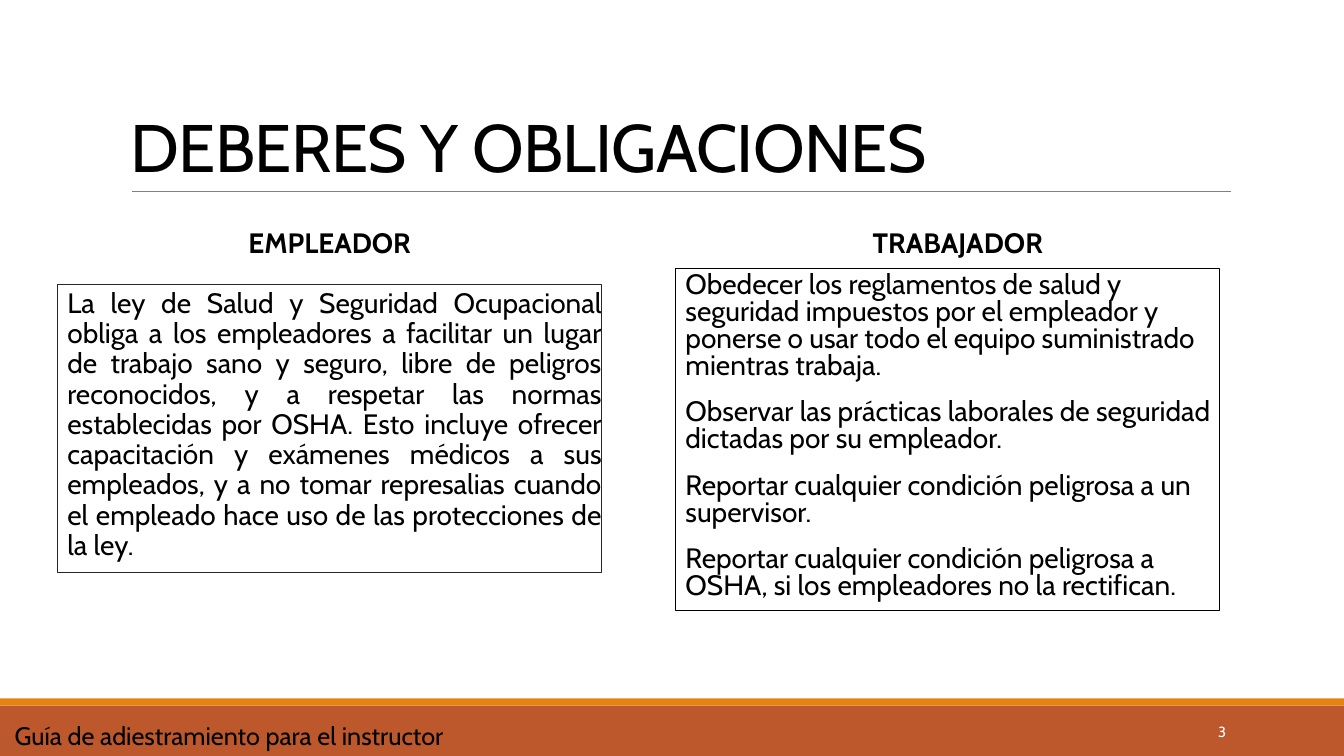
"""Build the slide on the duties of employers and workers."""
from dataclasses import dataclass

import pptx
import pptx.dml.color
import pptx.enum.shapes
import pptx.enum.text
import pptx.oxml.ns
import pptx.slide
import pptx.util
from lxml import etree
from pptx.util import Inches

ALIGN = pptx.enum.text.PP_ALIGN
ANCHOR = pptx.enum.text.MSO_ANCHOR
COLORS = {
    "text": "000000",
    "page_number": "FFFFFF",
    "rule": "808080",
    "employer_border": "262626",
    "worker_border": "000000",
    "footer": "BD582C",
    "accent": "E48312",
}
FONT = "Cabin"
COLUMN_WIDTH = 5.4


@dataclass(frozen=True)
class Band:
    top: float
    height: float
    color: str


@dataclass(frozen=True)
class TextBlock:
    left: float
    top: float
    width: float
    height: float
    paragraphs: tuple[str, ...]
    size: float = 20
    color: str = "text"
    bold: bool = False
    align: ALIGN = ALIGN.LEFT
    anchor: ANCHOR = ANCHOR.TOP
    line_spacing: float = 1.0
    before: float = 0
    after: float = 0
    tracking: float = 0
    border: str = ""
    right_inset: float = 0.1


def heading(left: float, caption: str) -> TextBlock:
    return TextBlock(left, 2.02, COLUMN_WIDTH, 0.81, (caption,), bold=True,
                     align=ALIGN.CENTER, anchor=ANCHOR.MIDDLE,
                     line_spacing=0.9, before=12, after=2)


def panel(left: float, top: float, height: float, duties: tuple[str, ...],
          border: str, align: ALIGN, line_spacing: float) -> TextBlock:
    return TextBlock(left, top, COLUMN_WIDTH, height, duties, align=align,
                     line_spacing=line_spacing, before=12, after=2,
                     border=border, right_inset=0)


BANDS = (Band(7, 0.5, "footer"), Band(6.93, 0.07, "accent"))

EMPLOYER_DUTIES = (
    "La ley de Salud y Seguridad Ocupacional obliga a los empleadores a "
    "facilitar un lugar de trabajo sano y seguro, libre de peligros "
    "reconocidos, y a respetar las normas establecidas por OSHA. Esto incluye "
    "ofrecer capacitación y exámenes médicos a sus empleados, y a no tomar "
    "represalias cuando el empleado hace uso de las protecciones de la ley.",
)
WORKER_DUTIES = (
    "Obedecer los reglamentos de salud y seguridad impuestos por el empleador "
    "y ponerse o usar todo el equipo suministrado mientras trabaja.",
    "Observar las prácticas laborales de seguridad dictadas por su empleador.",
    "Reportar cualquier condición peligrosa a un supervisor.",
    "Reportar cualquier condición peligrosa a OSHA, si los empleadores no la "
    "rectifican.",
)

TEXT_BLOCKS = (
    TextBlock(1.2, 0.31, 11, 1.59, ("DEBERES Y OBLIGACIONES",), size=48,
              anchor=ANCHOR.BOTTOM, line_spacing=0.85, tracking=-0.5),
    heading(0.57, "EMPLEADOR"),
    panel(0.57, 2.82, 2.86, EMPLOYER_DUTIES, "employer_border", ALIGN.JUSTIFY, 0.9),
    heading(6.8, "TRABAJADOR"),
    panel(6.7, 2.66, 3.4, WORKER_DUTIES, "worker_border", ALIGN.LEFT, 0.8),
    TextBlock(-0.15, 7.1, 4.9, 0.4, ("Guía de adiestramiento para el instructor ",),
              size=18, align=ALIGN.CENTER),
    TextBlock(10.83, 7.06, 1.43, 0.4, ("3",), size=10.5, color="page_number",
              align=ALIGN.RIGHT, anchor=ANCHOR.MIDDLE),
)


def rgb(name: str) -> pptx.dml.color.RGBColor:
    return pptx.dml.color.RGBColor.from_string(COLORS[name])


def draw_band(slide: pptx.slide.Slide, band: Band, width: int) -> None:
    strip = slide.shapes.add_shape(
        pptx.enum.shapes.MSO_SHAPE.RECTANGLE,
        0, Inches(band.top), width, Inches(band.height))
    strip.shadow.inherit = False
    strip.fill.solid()
    strip.fill.fore_color.rgb = rgb(band.color)
    strip.line.fill.background()


def draw_title_rule(slide: pptx.slide.Slide) -> None:
    rule = slide.shapes.add_connector(
        pptx.enum.shapes.MSO_CONNECTOR.STRAIGHT,
        Inches(1.31), Inches(1.9), Inches(12.21), Inches(1.9))
    rule.line.color.rgb = rgb("rule")
    rule.line.width = pptx.util.Pt(0.5)
    properties = rule._element.spPr
    etree.SubElement(properties, pptx.oxml.ns.qn("a:effectLst"))


def draw_text(slide: pptx.slide.Slide, block: TextBlock) -> None:
    box = slide.shapes.add_textbox(Inches(block.left), Inches(block.top),
                                   Inches(block.width), Inches(block.height))
    if block.border:
        box.line.color.rgb = rgb(block.border)
        box.line.width = pptx.util.Pt(0.75)
    frame = box.text_frame
    frame.word_wrap = True
    frame.vertical_anchor = block.anchor
    frame.margin_right = Inches(block.right_inset)
    for index, wording in enumerate(block.paragraphs):
        paragraph = frame.add_paragraph() if index else frame.paragraphs[0]
        paragraph.alignment = block.align
        paragraph.line_spacing = block.line_spacing
        paragraph.space_before = pptx.util.Pt(block.before)
        paragraph.space_after = pptx.util.Pt(block.after)
        run = paragraph.add_run()
        run.text = wording
        run.font.name = FONT
        run.font.size = pptx.util.Pt(block.size)
        run.font.bold = block.bold
        run.font.color.rgb = rgb(block.color)
        if block.tracking:
            run.font._element.set("spc", str(round(block.tracking * 100)))


def main() -> None:
    presentation = pptx.Presentation()
    presentation.slide_width = Inches(13.33)
    presentation.slide_height = Inches(7.5)
    slide = presentation.slides.add_slide(presentation.slide_layouts[6])
    for band in BANDS:
        draw_band(slide, band, presentation.slide_width)
    draw_title_rule(slide)
    for block in TEXT_BLOCKS:
        draw_text(slide, block)
    presentation.save("out.pptx")


if __name__ == "__main__":
    main()
